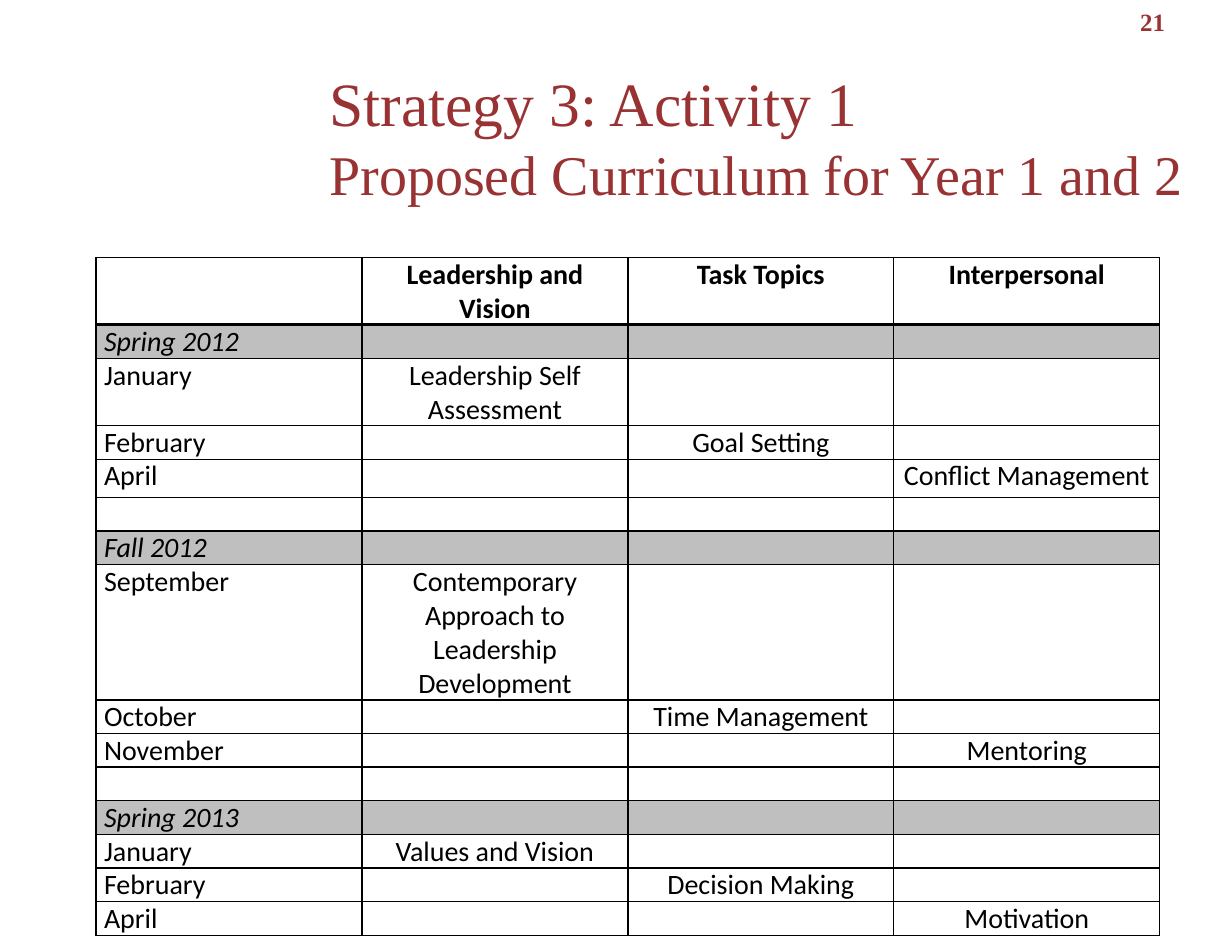
from dataclasses import dataclass

from pptx import Presentation
from pptx import util as u
from pptx.dml import color as c
from pptx.enum import text
from pptx.oxml import parse_xml
from pptx.oxml import ns


@dataclass(frozen=True)
class Theme:
    """Hold the colours, fonts and type sizes."""
    accent: str = "993333"
    ink: str = "000000"
    paper: str = "FFFFFF"
    band: str = "BFBFBF"
    serif: str = "Times New Roman"
    sans: str = "Calibri"
    title: float = 39.6
    subtitle: float = 36
    number: float = 16
    body: float = 18
    rule: float = 1
    header_rule: float = 2.25


@dataclass(frozen=True)
class Row:
    """Describe one table row."""
    cells: tuple[str, ...] = ()
    height: float = 0.76
    header: bool = False
    term: bool = False


T = Theme()
COLUMNS, COLUMN_WIDTH = 4, 6.03
ROWS = (
    Row(("", "Leadership and Vision", "Task Topics", "Interpersonal"), 1.37, header=True),
    Row(("Spring 2012",), term=True),
    Row(("January", "Leadership Self Assessment"), 1.52),
    Row(("February", "", "Goal Setting")),
    Row(("April", "", "", "Conflict Management"), 0.86),
    Row(),
    Row(("Fall 2012",), term=True),
    Row(("September", "Contemporary Approach to Leadership Development"), 3.07),
    Row(("October", "", "Time Management")),
    Row(("November", "", "", "Mentoring")),
    Row(),
    Row(("Spring 2013",), term=True),
    Row(("January", "Values and Vision")),
    Row(("February", "", "Decision Making")),
    Row(("April", "", "", "Motivation")),
)


def add_run(p, words: str, font: str, size: float, color: str,
            bold: bool = False, italic: bool = False) -> None:
    """Add one styled run to a paragraph."""
    r = p.add_run()
    r.text = words
    r.font.name, r.font.size = font, u.Pt(size)
    r.font.bold, r.font.italic = bold, italic
    r.font.color.rgb = c.RGBColor.from_string(color)


def add_box(s, left: float, top: float, width: float, height: float):
    """Add a wrapping text box and return its text frame."""
    tf = s.shapes.add_textbox(u.Cm(left), u.Cm(top), u.Cm(width), u.Cm(height)).text_frame
    tf.word_wrap = True
    tf.margin_left = tf.margin_right = u.Cm(0.28)
    tf.margin_top = tf.margin_bottom = u.Cm(0.15)
    return tf


def set_borders(cell, top: float, bottom: float) -> None:
    """Rule all four sides of a cell."""
    tc_pr = cell._tc.get_or_add_tcPr()
    for side, width in (("L", T.rule), ("R", T.rule), ("T", top), ("B", bottom)):
        tc_pr.append(parse_xml(
            f'<a:ln{side} {ns.nsdecls("a")} w="{u.Pt(width)}"><a:solidFill>'
            f'<a:srgbClr val="{T.ink}"/></a:solidFill></a:ln{side}>'))


def add_curriculum(s, left: float, top: float) -> None:
    """Draw the curriculum table."""
    height = sum(row.height for row in ROWS)
    table = s.shapes.add_table(len(ROWS), COLUMNS, u.Cm(left), u.Cm(top),
                               u.Cm(COLUMNS * COLUMN_WIDTH), u.Cm(height)).table
    table.first_row = table.horz_banding = False
    for column in table.columns:
        column.width = u.Cm(COLUMN_WIDTH)
    for i, row in enumerate(ROWS):
        table.rows[i].height = u.Cm(row.height)
        above = T.header_rule if i and ROWS[i - 1].header else T.rule
        below = T.header_rule if row.header else T.rule
        for j in range(COLUMNS):
            cell = table.cell(i, j)
            cell.margin_left = cell.margin_right = u.Cm(0.18)
            cell.margin_top = cell.margin_bottom = 0
            set_borders(cell, above, below)
            cell.fill.solid()
            cell.fill.fore_color.rgb = c.RGBColor.from_string(T.band if row.term else T.paper)
            p = cell.text_frame.paragraphs[0]
            p.alignment = text.PP_ALIGN.CENTER if j else text.PP_ALIGN.LEFT
            if j < len(row.cells) and row.cells[j]:
                add_run(p, row.cells[j], T.sans, T.body, T.ink, row.header, row.term)


def main() -> None:
    """Build and save the slide."""
    prs = Presentation()
    prs.slide_width, prs.slide_height = u.Cm(27.94), u.Cm(21.59)
    s = prs.slides.add_slide(prs.slide_layouts[6])

    tf = add_box(s, 7.19, 2.13, 20.75, 1.9)
    tf.vertical_anchor = text.MSO_ANCHOR.MIDDLE
    p = tf.paragraphs[0]
    add_run(p, "Strategy 3: Activity 1", T.serif, T.title, T.accent)
    p.add_line_break()
    add_run(p, "Proposed Curriculum for Year 1 and 2", T.serif, T.subtitle, T.accent)

    p = add_box(s, 24.97, 0, 2.34, 1.14).paragraphs[0]
    p.alignment = text.PP_ALIGN.CENTER
    add_run(p, "21", T.serif, T.number, T.accent, bold=True)

    add_curriculum(s, 2.18, 5.84)
    prs.save("out.pptx")


if __name__ == "__main__":
    main()
